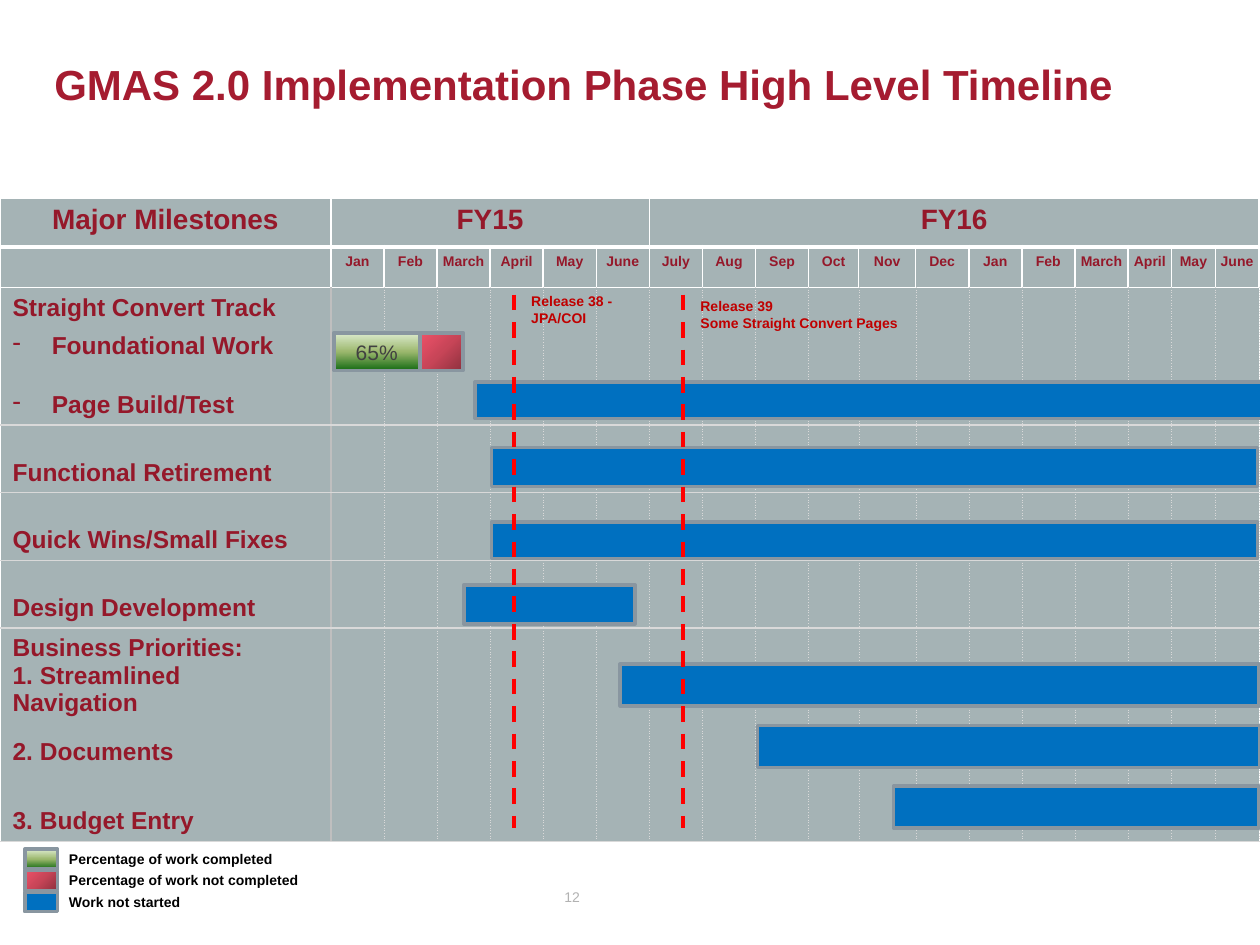
from lxml import etree
from pptx import Presentation
from pptx import util as u
from pptx.dml.color import RGBColor
from pptx.enum import dml, shapes, text
from pptx.oxml import parse_xml
from pptx.oxml.ns import qn

NS = 'xmlns:a="http://schemas.openxmlformats.org/drawingml/2006/main"'
CRIMSON, SLATE, WHITE, GRID, EDGE = "95182A", "A5B3B5", "FFFFFF", "D9D9D9", "BFBFBF"
DONE = (("DDEBCF", "9CB86E", "156B13"), 90)
REMAINING = (("8D313E", "C84558", "EE5269"), 225)
NOT_STARTED = "0070C0"

MONTHS = ("Jan Feb March April May June July Aug Sep Oct Nov Dec "
          "Jan Feb March April May June").split()
MONTH_WIDTHS = [1.07] * 9 + [1.01, 1.15] + [1.07] * 4 + [0.88] * 3
ROW_HEIGHTS = [0.99, 0.82, 2.74, 1.35, 1.35, 1.35, 4.29]
SINGLE_TRACKS = ["Functional Retirement", "Quick Wins/Small Fixes", "Design Development"]

# Left, top, width and height inside the timeline, then fill and label
BARS = [
    (6.73, 2.72, 1.73, 0.76, DONE, "65%"),
    (8.48, 2.72, 0.86, 0.76, REMAINING, ""),
    (9.58, 3.71, 15.87, 0.74, NOT_STARTED, ""),
    (9.91, 5.03, 15.44, 0.79, NOT_STARTED, ""),
    (9.91, 6.53, 15.44, 0.74, NOT_STARTED, ""),
    (9.35, 7.80, 3.45, 0.79, NOT_STARTED, ""),
    (12.50, 9.40, 12.88, 0.84, NOT_STARTED, ""),
    (15.27, 10.64, 10.13, 0.84, NOT_STARTED, ""),
    (18.01, 11.86, 7.37, 0.84, NOT_STARTED, ""),
]
# Line position, then note left, top, width and lines
RELEASES = [
    (10.36, 10.46, 1.78, 2.36, ["Release 38 - JPA/COI"]),
    (13.77, 13.87, 1.88, 4.70, ["Release 39", "Some Straight Convert Pages"]),
]
LEGEND = [(DONE, "Percentage of work completed"),
          (REMAINING, "Percentage of work not completed"),
          (NOT_STARTED, "Work not started")]


def rgb(value):
    return RGBColor.from_string(value)


def cm_box(left, top, width, height):
    return [u.Cm(v) for v in (left, top, width, height)]


def style(paragraph, size, color, bold=True, align=None):
    font = paragraph.font
    font.name, font.size, font.bold = "Arial", u.Pt(size), bold
    font.color.rgb = rgb(color)
    paragraph.alignment = align


def write(frame, lines, size, color, bold=True, align=None):
    frame.text = "\n".join(lines)
    for paragraph in frame.paragraphs:
        style(paragraph, size, color, bold, align)


def add_note(slide, box, lines, size, color, bold=True, align=None, anchor=None):
    frame = slide.shapes.add_textbox(*cm_box(*box)).text_frame
    frame.word_wrap = True
    frame.vertical_anchor = anchor
    write(frame, lines, size, color, bold, align)


def add_bar(slide, box, fill, label=""):
    bar = slide.shapes.add_shape(shapes.MSO_SHAPE.RECTANGLE, *cm_box(*box))
    bar.shadow.inherit = False
    if isinstance(fill, str):
        bar.fill.solid()
        bar.fill.fore_color.rgb = rgb(fill)
    else:
        colors, angle = fill
        stops = "".join(f'<a:gs pos="{i * 50000}"><a:srgbClr val="{c}"/></a:gs>'
                        for i, c in enumerate(colors))
        bar._element.spPr.find(qn("a:prstGeom")).addnext(parse_xml(
            f'<a:gradFill {NS}><a:gsLst>{stops}</a:gsLst>'
            f'<a:lin ang="{angle * 60000}" scaled="0"/></a:gradFill>'))
    bar.line.color.rgb = rgb("8996A0")
    bar.line.width = u.Pt(2)
    if label:
        write(bar.text_frame, [label], 12, "414141", False, text.PP_ALIGN.CENTER)


def set_borders(cell, **sides):
    props = cell._tc.get_or_add_tcPr()
    for side in "LRTB":
        color, width = sides[side]
        dash = "sysDot" if width < 1 else "solid"
        props.append(parse_xml(
            f'<a:ln{side} {NS} w="{int(width * 12700)}"><a:solidFill><a:srgbClr val="{color}"/>'
            f'</a:solidFill><a:prstDash val="{dash}"/></a:ln{side}>'))


def paint_cell(cell, row, col):
    white, solid, dots = (WHITE, 1), (GRID, 1), (GRID, 0.25)
    if row < 2:
        set_borders(cell, L=white, R=white, T=(WHITE, 3) if row == 1 else white,
                    B=white if row else (WHITE, 3))
    else:
        set_borders(cell, L=(white, (EDGE, 1))[col] if col < 2 else dots,
                    R=dots if col else (EDGE, 1),
                    T=white if row == 2 else solid, B=solid)
    cell.fill.solid()
    cell.fill.fore_color.rgb = rgb(SLATE)
    # Small type in empty cells keeps the rows at their height
    end = etree.SubElement(cell.text_frame.paragraphs[0]._p, qn("a:endParaRPr"))
    end.set("sz", "800")


def fill_header(table):
    center = text.PP_ALIGN.CENTER
    table.cell(0, 1).merge(table.cell(0, 6))
    table.cell(0, 7).merge(table.cell(0, 18))
    headings = [(0, 0, "Major Milestones", 16), (0, 1, "FY15", 16), (0, 7, "FY16", 16)]
    headings += [(1, col, month, 8) for col, month in enumerate(MONTHS, 1)]
    for row, col, words, size in headings:
        cell = table.cell(row, col)
        if col:
            cell.margin_left = cell.margin_right = u.Cm(0.03)
        write(cell.text_frame, [words], size, CRIMSON, align=center)


def fill_tracks(table):
    # Straight convert track with dashed sub-items
    convert = table.cell(2, 0)
    convert.vertical_anchor = text.MSO_ANCHOR.MIDDLE
    convert.text = "Straight Convert Track\nFoundational Work\nPage Build/Test"
    for paragraph in convert.text_frame.paragraphs[1:]:
        props = paragraph._p.get_or_add_pPr()
        props.set("marL", str(u.Cm(0.79)))
        props.set("indent", str(-u.Cm(0.79)))
        etree.SubElement(props, qn("a:buChar")).set("char", "-")
        paragraph.space_before, paragraph.space_after = u.Pt(6), u.Pt(12)

    # Single-line tracks
    for row, track in enumerate(SINGLE_TRACKS, 3):
        table.cell(row, 0).text = track
        table.cell(row, 0).text_frame.paragraphs[0].line_spacing = 2.0

    # Business priorities
    priorities = table.cell(6, 0)
    priorities.text = ("Business Priorities:\n1. Streamlined\vNavigation\n"
                       "2. Documents\n3. Budget Entry")
    for paragraph in priorities.text_frame.paragraphs[2:]:
        paragraph.space_before = paragraph.space_after = u.Pt(12)

    for row in range(2, 7):
        for paragraph in table.cell(row, 0).text_frame.paragraphs:
            style(paragraph, 14, CRIMSON)


def add_timeline(slide, left, top, width, height):
    widths = [6.67] + MONTH_WIDTHS
    table = slide.shapes.add_table(len(ROW_HEIGHTS), len(widths),
                                   *cm_box(left, top, width, height)).table
    table.first_row = table.horz_banding = False
    for column, size in zip(table.columns, widths):
        column.width = u.Cm(size)
    for row, size in zip(table.rows, ROW_HEIGHTS):
        row.height = u.Cm(size)
    for row in range(len(ROW_HEIGHTS)):
        for col in range(len(widths)):
            paint_cell(table.cell(row, col), row, col)
    fill_header(table)
    fill_tracks(table)

    # Work bars
    for x, y, w, h, fill, label in BARS:
        add_bar(slide, (left + x, top + y, w, h), fill, label)

    # Release lines and notes
    for x, note_x, note_y, note_width, lines in RELEASES:
        add_note(slide, (left + note_x, top + note_y, note_width, 0.94), lines, 8, "C00000")
        release = slide.shapes.add_connector(
            shapes.MSO_CONNECTOR.STRAIGHT, u.Cm(left + x), u.Cm(top + 1.95),
            u.Cm(left + x), u.Cm(top + 12.7))
        release.line.color.rgb = rgb("FF0000")
        release.line.width = u.Pt(2.25)
        release.line.dash_style = dml.MSO_LINE.DASH
        etree.SubElement(release._element.spPr, qn("a:effectLst"))


def add_legend(slide, left, top, width, height):
    step = height / len(LEGEND)
    for i, (fill, label) in enumerate(LEGEND):
        y = top + i * step
        add_bar(slide, (left, y, 0.66, 0.4), fill)
        add_note(slide, (left + 0.64, y - 0.1, width - 0.64, 0.61), [label], 8, "000000")


def add_title(slide, left, top, width, height):
    title = slide.shapes.title
    title.left, title.top, title.width, title.height = cm_box(left, top, width, height)
    title.text_frame.vertical_anchor = text.MSO_ANCHOR.MIDDLE
    write(title.text_frame, ["GMAS 2.0 Implementation Phase High Level Timeline"],
          24, "A51C30", align=text.PP_ALIGN.LEFT)


def main():
    deck = Presentation()
    deck.slide_width, deck.slide_height = u.Cm(25.4), u.Cm(19.05)
    slide = deck.slides.add_slide(deck.slide_layouts[5])
    add_title(slide, 0.84, 0.41, 24.36, 2.54)
    add_timeline(slide, 0, 3.99, 25.38, 12.9)
    add_legend(slide, 0.5, 17.12, 6.25, 1.29)
    # Page number
    add_note(slide, (6.99, 17.58, 9.09, 1.02), ["12"], 8, "B2B2B2", False,
             text.PP_ALIGN.CENTER, text.MSO_ANCHOR.MIDDLE)
    deck.save("out.pptx")


if __name__ == "__main__":
    main()
